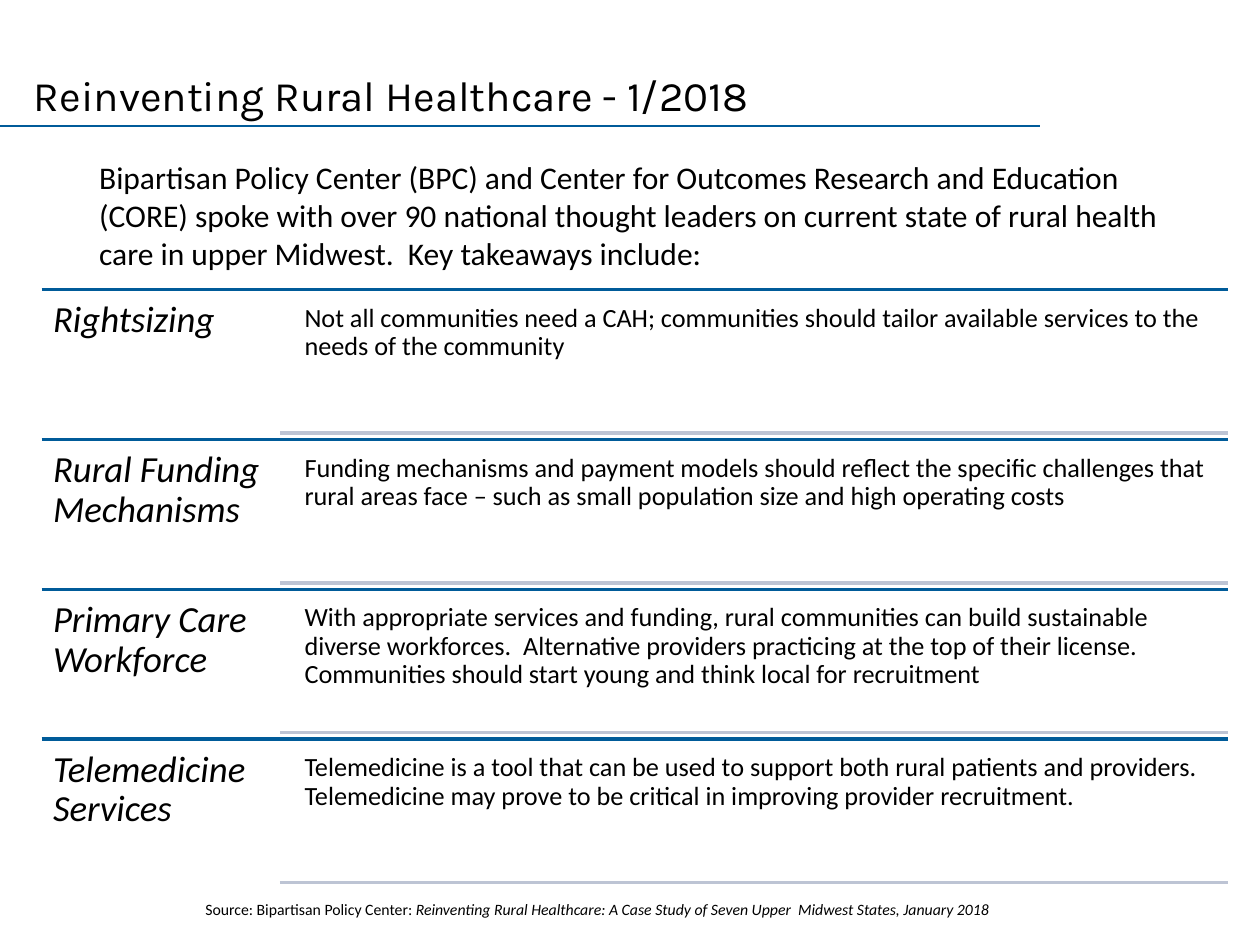
"""Build the rural healthcare takeaways slide."""
import dataclasses
import typing

import pptx
import pptx.dml.color
import pptx.enum.shapes
import pptx.enum.text
import pptx.oxml
import pptx.oxml.ns
import pptx.util

Cm = pptx.util.Cm
Pt = pptx.util.Pt
RGBColor = pptx.dml.color.RGBColor
Align = pptx.enum.text.PP_ALIGN
Anchor = pptx.enum.text.MSO_ANCHOR

BLUE = RGBColor(0x00, 0x5B, 0x99)
GREY = RGBColor(0xBD, 0xC4, 0xD4)
BLACK = RGBColor(0x00, 0x00, 0x00)

ROWS_TOP = 5.84
ROW_HEIGHT = 3.02
ROW_LEFT = 0.84
ROW_RIGHT = 24.76
DETAIL_LEFT = 5.99
DETAIL_GAP = 0.15
DETAIL_HEIGHT = 2.74
RULE_LEFT = 5.64


@dataclasses.dataclass(frozen=True)
class Takeaway:
    label: str
    detail: str


@dataclasses.dataclass(frozen=True)
class Box:
    left: float
    top: float
    width: float
    height: float


@dataclasses.dataclass(frozen=True)
class Style:
    size: float
    font: str = "Calibri"
    italic: bool = False
    inset: typing.Optional[float] = None
    paragraph: typing.Dict[str, typing.Any] = dataclasses.field(default_factory=dict)


TAKEAWAYS = (
    Takeaway(
        "Rightsizing",
        "Not all communities need a CAH; communities should tailor available services "
        "to the needs of the community",
    ),
    Takeaway(
        "Rural Funding Mechanisms",
        "Funding mechanisms and payment models should reflect the specific challenges that "
        "rural areas face – such as small population size and high operating costs",
    ),
    Takeaway(
        "Primary Care Workforce",
        "With appropriate services and funding, rural communities can build sustainable "
        "diverse workforces.  Alternative providers practicing at the top of their license.  "
        "Communities should start young and think local for recruitment",
    ),
    Takeaway(
        "Telemedicine Services",
        "Telemedicine is a tool that can be used to support both rural patients and providers.  "
        "Telemedicine may prove to be critical in improving provider recruitment.",
    ),
)
INTRODUCTION = (
    "Bipartisan Policy Center (BPC) and Center for Outcomes Research and Education (CORE) "
    "spoke with over 90 national thought leaders on current state of rural health care in "
    "upper Midwest.  Key takeaways include:"
)
SOURCE_LEAD = "Source: Bipartisan Policy Center: "
SOURCE_TITLE = (
    "Reinventing Rural Healthcare: A Case Study of Seven Upper  Midwest States, January 2018"
)

TIGHT = {"line_spacing": 0.9}
TITLE_STYLE = Style(24, font="Karla", paragraph={"alignment": Align.LEFT})
LABEL_STYLE = Style(21, italic=True, inset=0.23, paragraph=TIGHT)
DETAIL_STYLE = Style(15, inset=0.15, paragraph=TIGHT)
BODY_STYLE = Style(18)
SOURCE_STYLE = Style(9, paragraph={"alignment": Align.CENTER})


def apply(target: typing.Any, values: typing.Dict[str, typing.Any]) -> None:
    for name, value in values.items():
        setattr(target, name, value)


def place(shape: typing.Any, box: Box) -> None:
    apply(shape, {name: Cm(value) for name, value in dataclasses.asdict(box).items()})


def write(shape: typing.Any, text: str, style: Style) -> typing.Any:
    frame = shape.text_frame
    frame.word_wrap = True
    if style.inset is not None:
        sides = ("left", "top", "right", "bottom")
        apply(frame, {f"margin_{side}": Cm(style.inset) for side in sides})
    paragraph = frame.paragraphs[0]
    apply(paragraph, style.paragraph)
    paragraph.add_run().text = text
    apply(
        paragraph.font,
        {"name": style.font, "size": Pt(style.size), "italic": style.italic},
    )
    paragraph.font.color.rgb = BLACK
    return paragraph


def add_text(slide: typing.Any, box: Box, text: str, style: Style) -> typing.Any:
    shape = slide.shapes.add_textbox(0, 0, 0, 0)
    place(shape, box)
    return write(shape, text, style)


def add_rule(
    slide: typing.Any, left: float, right: float, top: float, color: RGBColor, weight: float
) -> None:
    rule = slide.shapes.add_connector(
        pptx.enum.shapes.MSO_CONNECTOR.STRAIGHT, Cm(left), Cm(top), Cm(right), Cm(top)
    )
    rule.line.color.rgb = color
    rule.line.width = Pt(weight)
    properties = rule._element.spPr
    properties.append(pptx.oxml.parse_xml(f"<a:effectLst {pptx.oxml.ns.nsdecls('a')}/>"))


def add_takeaway(slide: typing.Any, takeaway: Takeaway, top: float) -> None:
    detail_top = top + DETAIL_GAP
    add_rule(slide, ROW_LEFT, ROW_RIGHT, top, BLUE, 2)
    add_text(slide, Box(ROW_LEFT, top, 4.78, ROW_HEIGHT), takeaway.label, LABEL_STYLE)
    detail_box = Box(DETAIL_LEFT, detail_top, ROW_RIGHT - DETAIL_LEFT, DETAIL_HEIGHT)
    add_text(slide, detail_box, takeaway.detail, DETAIL_STYLE)
    add_rule(slide, RULE_LEFT, ROW_RIGHT, detail_top + DETAIL_HEIGHT, GREY, 2)


def main() -> None:
    presentation = pptx.Presentation()
    apply(presentation, {"slide_width": Cm(25.4), "slide_height": Cm(19.05)})
    slide = presentation.slides.add_slide(presentation.slide_layouts[5])

    title = slide.shapes.title
    place(title, Box(0.43, 1.27, 23.24, 1.27))
    write(title, "Reinventing Rural Healthcare - 1/2018", TITLE_STYLE)
    title.text_frame.vertical_anchor = Anchor.MIDDLE
    add_rule(slide, 0, 20.96, 2.54, BLUE, 0.75)

    for index, takeaway in enumerate(TAKEAWAYS):
        add_takeaway(slide, takeaway, ROWS_TOP + index * ROW_HEIGHT)

    source = add_text(slide, Box(1.09, 18.01, 21.89, 0.64), SOURCE_LEAD, SOURCE_STYLE)
    citation = source.add_run()
    citation.text = SOURCE_TITLE
    citation.font.italic = True
    add_text(slide, Box(1.75, 3.07, 21.89, 2.57), INTRODUCTION, BODY_STYLE)

    presentation.save("out.pptx")


if __name__ == "__main__":
    main()
